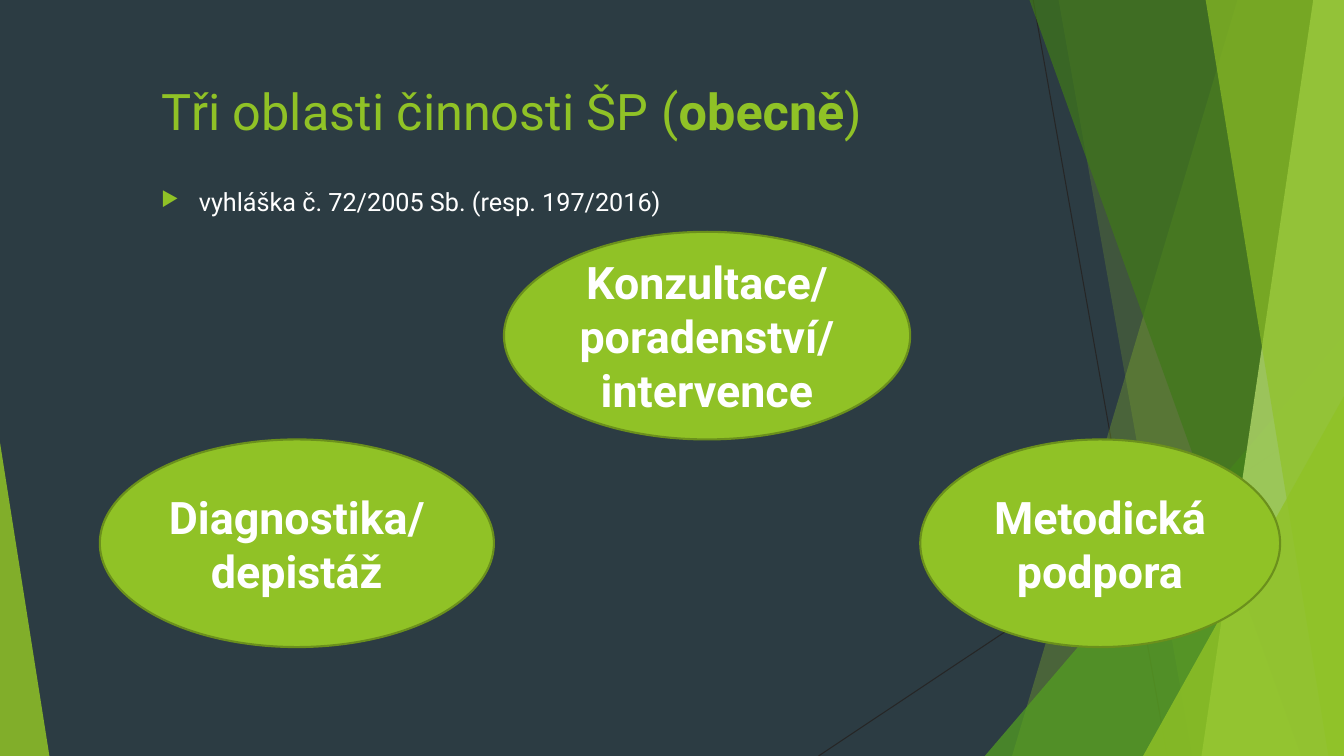
from lxml import etree
from pptx import Presentation
from pptx.dml.color import RGBColor
from pptx.enum.shapes import MSO_CONNECTOR, MSO_SHAPE
from pptx.enum.text import MSO_ANCHOR, PP_ALIGN
from pptx.oxml.ns import qn
from pptx.util import Pt

STRAIGHT = MSO_CONNECTOR.STRAIGHT
TRIANGLE = MSO_SHAPE.ISOSCELES_TRIANGLE
OVAL = MSO_SHAPE.OVAL
MIDDLE, TOP = MSO_ANCHOR.MIDDLE, MSO_ANCHOR.TOP
CENTER = PP_ALIGN.CENTER

SLATE = RGBColor(0x2C, 0x3C, 0x43)
INK = RGBColor(0x26, 0x26, 0x26)
LIME = RGBColor(0x90, 0xC2, 0x26)
PALE_LIME = RGBColor(0xC0, 0xE4, 0x74)
GREEN = RGBColor(0x54, 0xA0, 0x21)
FOREST = RGBColor(0x3F, 0x78, 0x19)
OLIVE = RGBColor(0x6B, 0x90, 0x1C)
WHITE = RGBColor(0xFF, 0xFF, 0xFF)

WIDTH, HEIGHT, BAND_TOP = 960, 540, -0.72
TITLE_FONT = {"name": "Roboto", "size": Pt(36), "bold": False}
BODY_FONT = {"name": "Roboto", "size": Pt(18), "bold": False}
AREA_FONT = {"name": "Roboto", "size": Pt(32), "bold": True}


def paint_facet(facet, color, opacity):
    facet.shadow.inherit = False
    facet.fill.solid()
    facet.fill.fore_color.rgb = color
    facet.line.fill.background()
    tint = facet.element.spPr.find(qn("a:solidFill")).find(qn("a:srgbClr"))
    etree.SubElement(tint, qn("a:alpha"), val=str(opacity * 1000))


def add_words(paragraph, words, font_format, color):
    run = paragraph.add_run()
    run.text = words
    for attribute, value in font_format.items():
        setattr(run.font, attribute, value)
    run.font.color.rgb = color
    return run


deck = Presentation()
deck.slide_width, deck.slide_height = Pt(WIDTH), Pt(HEIGHT)
slide = deck.slides.add_slide(deck.slide_layouts[6])
slide.background.fill.solid()
slide.background.fill.fore_color.rgb = SLATE
shapes = slide.shapes

for ends in [(738, 0, 833.76, HEIGHT), (WIDTH, 290.16, 584.64, HEIGHT)]:
    ray = shapes.add_connector(STRAIGHT, *map(Pt, ends))
    ray.line.color.rgb = INK
    ray.line.width = Pt(0.75)
    etree.SubElement(ray.element.spPr, qn("a:effectLst"))

facets = [
    ("band", 884.16, 722.88, LIME, 30),
    ("band", 756, 851.76, LIME, 20),
    ("corner", 703.44, 239.76, GREEN, 72),
    ("band", 735.12, 929.52, FOREST, 70),
    ("band", 938.16, 858.24, PALE_LIME, 70),
    ("band", 861.12, 948.96, LIME, 65),
    ("corner", 816.48, 282.96, LIME, 80),
]
for kind, first, second, color, opacity in facets:
    if kind == "band":
        outline = shapes.build_freeform(Pt(first), Pt(BAND_TOP))
        corners = [(WIDTH, BAND_TOP), (WIDTH, HEIGHT), (second, HEIGHT)]
        outline.add_line_segments([(Pt(x), Pt(y)) for x, y in corners], close=True)
        facet = outline.convert_to_shape()
    else:
        facet = shapes.add_shape(
            TRIANGLE, Pt(first), Pt(second), Pt(WIDTH - first), Pt(HEIGHT - second))
        facet.adjustments[0] = 1
    paint_facet(facet, color, opacity)

left_wedge = shapes.add_shape(TRIANGLE, 0, Pt(316.08), Pt(35.28), Pt(HEIGHT - 316.08))
left_wedge.adjustments[0] = 0
paint_facet(left_wedge, LIME, 85)

title = shapes.add_textbox(Pt(108), Pt(54), Pt(756), Pt(60.48)).text_frame
title.word_wrap = True
title.vertical_anchor = TOP
for words, bold in [("Tři oblasti činnosti ŠP (", False), ("obecně", True), (")", False)]:
    add_words(title.paragraphs[0], words, {**TITLE_FONT, "bold": bold}, LIME)

decree = shapes.add_textbox(Pt(108), Pt(129.6), Pt(756), Pt(53.28)).text_frame
decree.word_wrap = True
decree.vertical_anchor = TOP
decree_line = decree.paragraphs[0]
decree_line.space_before = Pt(10)
add_words(decree_line, "vyhláška č. 72/2005 Sb. (resp. 197/2016)", BODY_FONT, WHITE)
bullet = decree_line._p.get_or_add_pPr()
bullet.set("marL", str(Pt(27)))
bullet.set("indent", str(-Pt(27)))
bullet_color = etree.SubElement(bullet, qn("a:buClr"))
etree.SubElement(bullet_color, qn("a:srgbClr"), val=str(LIME))
etree.SubElement(bullet, qn("a:buSzPct"), val="80000")
etree.SubElement(bullet, qn("a:buChar"), char="▶")

areas = [
    ("Diagnostika/depistáž", 71.28, 313.92, 281.52),
    ("Konzultace/poradenství/intervence", 360, 165.6, 290.16),
    ("Metodická podpora", 657.36, 313.92, 257.04),
]
for words, left, top, width in areas:
    area = shapes.add_shape(OVAL, Pt(left), Pt(top), Pt(width), Pt(148.32))
    area.shadow.inherit = False
    area.fill.solid()
    area.fill.fore_color.rgb = LIME
    area.line.color.rgb = OLIVE
    area.line.width = Pt(1.5)
    area.text_frame.word_wrap = True
    area.text_frame.vertical_anchor = MIDDLE
    area.text_frame.paragraphs[0].alignment = CENTER
    add_words(area.text_frame.paragraphs[0], words, AREA_FONT, WHITE)

deck.save("out.pptx")
